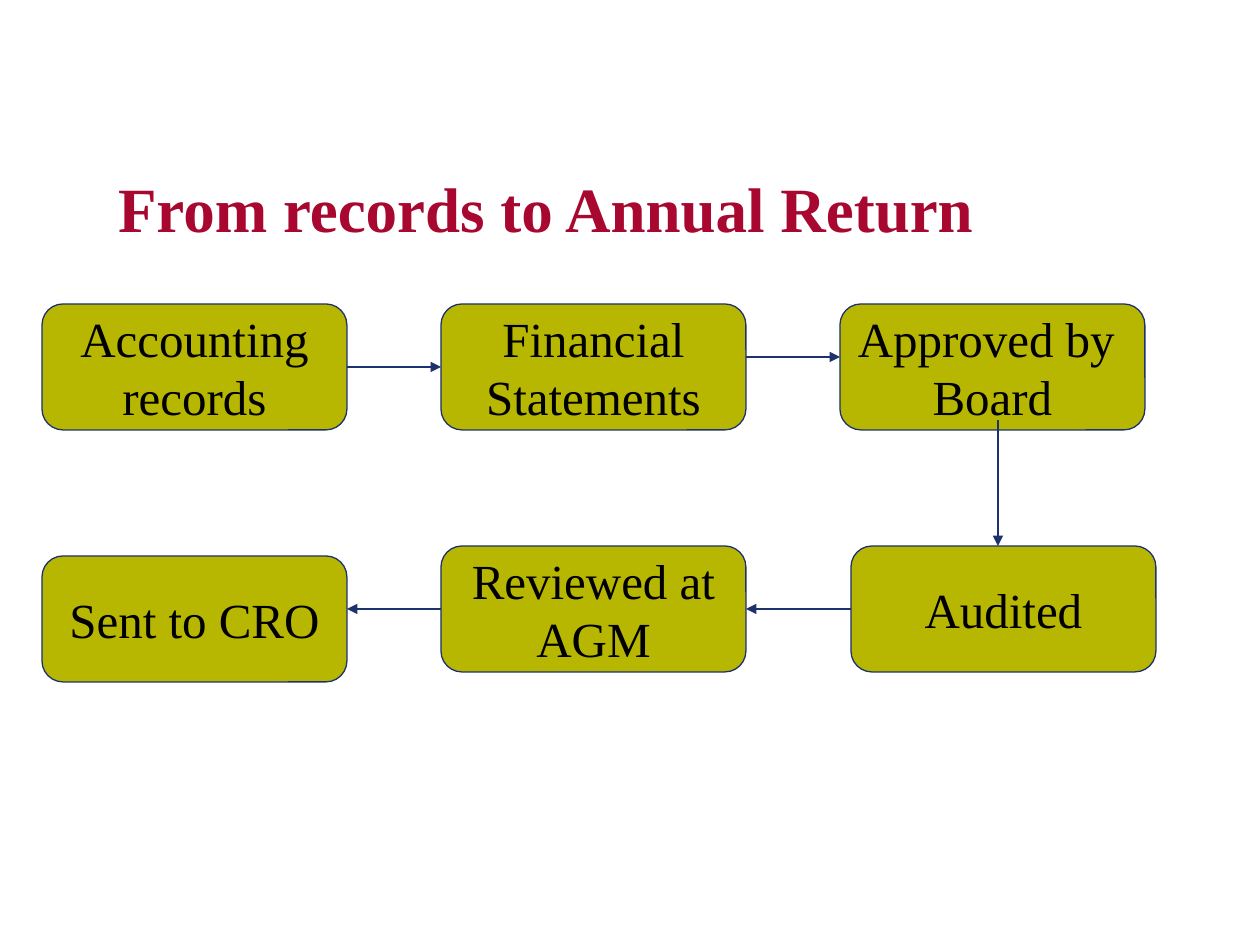
"""Build a slide showing the flow from accounting records to annual return."""
from lxml import etree
from pptx import Presentation
from pptx import util as u
from pptx.dml.color import RGBColor
from pptx.enum import shapes, text
from pptx.oxml.ns import qn

COLOURS = {"title": "A80830", "box": "B7B600", "line": "1D316F", "ink": "000000"}
BOX_WIDTH, BOX_HEIGHT = 305, 126


def px(length):
    return u.Emu(round(length * 914400 / 126))


def colour(name):
    return RGBColor.from_string(COLOURS[name])


def write(frame, wording, size, ink="ink", bold=False, align=text.PP_ALIGN.CENTER,
          anchor=text.MSO_ANCHOR.MIDDLE, spacing=None, after=None):
    frame.word_wrap = False
    frame.vertical_anchor = anchor
    for index, line in enumerate(wording.split("\n")):
        para = frame.add_paragraph() if index else frame.paragraphs[0]
        para.alignment = align
        para.line_spacing = spacing
        para.space_after = after
        span = para.add_run()
        span.text = line
        span.font.name = "Times New Roman"
        span.font.size = u.Pt(size)
        span.font.bold = bold
        span.font.color.rgb = colour(ink)


class FlowSlide:
    def __init__(self, page):
        self.page = page
        self.line_width = u.Pt(0.75)

    def outline(self, item):
        item.line.color.rgb = colour("line")
        item.line.width = self.line_width

    def title(self, wording, left, top, width, height):
        box = self.page.shapes.add_textbox(*map(px, (left, top, width, height)))
        frame = box.text_frame
        frame.margin_left = frame.margin_right = frame.margin_top = frame.margin_bottom = 0
        write(frame, wording, 36, ink="title", bold=True, align=text.PP_ALIGN.LEFT,
              anchor=text.MSO_ANCHOR.TOP, spacing=u.Pt(40), after=u.Pt(11.4))

    def step(self, wording, left, top):
        box = self.page.shapes.add_shape(
            shapes.MSO_SHAPE.ROUNDED_RECTANGLE, *map(px, (left, top, BOX_WIDTH, BOX_HEIGHT)))
        box.shadow.inherit = False
        box.fill.solid()
        box.fill.fore_color.rgb = colour("box")
        self.outline(box)
        write(box.text_frame, wording, 28)

    def arrow(self, *ends):
        arrow = self.page.shapes.add_connector(shapes.MSO_CONNECTOR.STRAIGHT, *map(px, ends))
        self.outline(arrow)
        etree.SubElement(arrow.line._get_or_add_ln(), qn("a:tailEnd"), type="triangle")
        etree.SubElement(arrow._element.spPr, qn("a:effectLst"))


def main():
    deck = Presentation()
    deck.slide_width, deck.slide_height = px(1260), px(945)
    slide = FlowSlide(deck.slides.add_slide(deck.slide_layouts[6]))
    slide.title("From records to Annual Return", 118, 175, 1062, 129)

    columns = [42, 441, 840]
    upper, lower = 304, 546
    labels = ["Accounting\nrecords", "Financial\nStatements", "Approved by \nBoard"]
    for wording, left in zip(labels, columns):
        slide.step(wording, left, upper)
    audit_left = 851
    slide.step("Audited", audit_left, lower)
    slide.step("Reviewed at\nAGM", columns[1], lower)
    slide.step("Sent to CRO", columns[0], lower + 10)

    first_end, second_end = (left + BOX_WIDTH for left in columns[:2])
    middle = lower + BOX_HEIGHT // 2
    slide.arrow(first_end, 367, columns[1], 367)
    slide.arrow(second_end, 357, columns[2], 357)
    slide.arrow(998, 420, 998, lower)
    slide.arrow(audit_left, middle, second_end, middle)
    slide.arrow(columns[1], middle, first_end, middle)
    deck.save("out.pptx")


if __name__ == "__main__":
    main()
